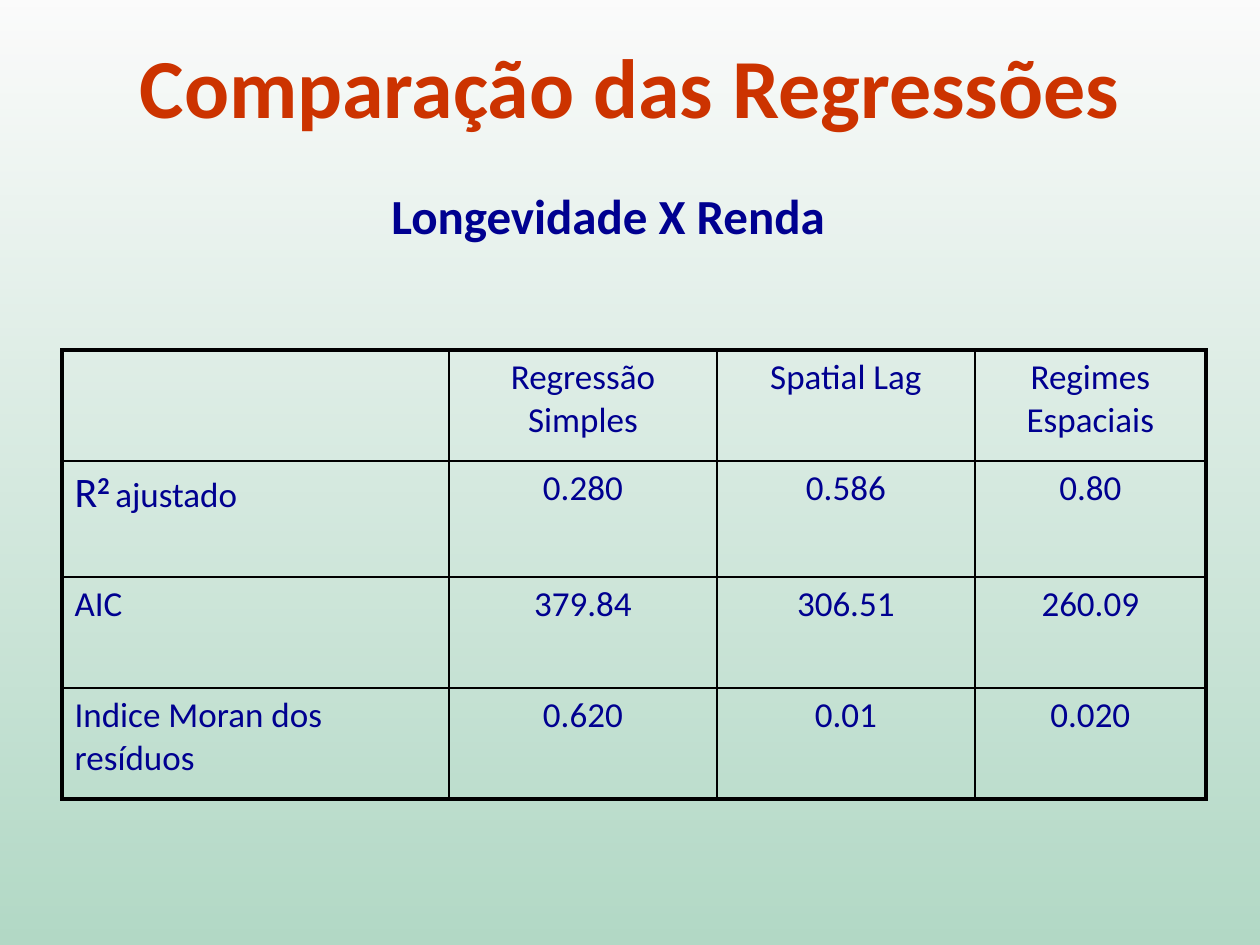
from lxml.etree import SubElement
from pptx import Presentation
from pptx.dml.color import RGBColor
from pptx.enum.shapes import MSO_SHAPE
from pptx.enum.text import MSO_ANCHOR, PP_ALIGN
from pptx.oxml.ns import qn
from pptx.util import Emu, Pt

PX_PER_INCH = 126
NAVY, RED, BLACK = "000090", "CC3300", "000000"


def px(length):
    return Emu(round(length * 914400 / PX_PER_INCH))


def rgb(value):
    return RGBColor.from_string(value)


def write(paragraph, text, size=20, color=NAVY, bold=False, align=PP_ALIGN.LEFT,
          superscript=False, space_percent=20):
    """Append one formatted run to a paragraph."""
    paragraph.alignment = align
    properties = paragraph._p.get_or_add_pPr()
    if space_percent and properties.find(qn("a:spcBef")) is None:
        spacing = SubElement(properties, qn("a:spcBef"))
        SubElement(spacing, qn("a:spcPct")).set("val", str(space_percent * 1000))
    run = paragraph.add_run()
    run.text = text
    run.font.name = "Calibri"
    run.font.size = Pt(size)
    run.font.bold = bold
    run.font.color.rgb = rgb(color)
    if superscript:
        run._r.get_or_add_rPr().set("baseline", "30000")


class SlideBuilder:
    def __init__(self, presentation):
        self.slide = presentation.slides.add_slide(presentation.slide_layouts[5])
        self.shapes = self.slide.shapes

    def backdrop(self, width, height, bottom, top, opacity):
        shape = self.shapes.add_shape(MSO_SHAPE.RECTANGLE, 0, 0, px(width), px(height))
        shape.shadow.inherit = False
        shape.line.fill.background()
        shape.fill.gradient()
        shape.fill.gradient_angle = 90
        for stop, color in zip(shape.fill.gradient_stops, (bottom, top)):
            stop.color.rgb = rgb(color)
        for color in shape._element.spPr.iter(qn("a:srgbClr")):
            SubElement(color, qn("a:alpha")).set("val", str(opacity * 1000))
        # Place behind the title
        self.shapes._spTree.insert(2, shape._element)

    def place_text(self, shape, box, text, **style):
        shape.left, shape.top, shape.width, shape.height = map(px, box)
        frame = shape.text_frame
        frame.word_wrap = True
        frame.vertical_anchor = MSO_ANCHOR.TOP
        write(frame.paragraphs[0], text, **style)

    def title(self, box, text, **style):
        self.place_text(self.shapes.title, box, text, **style)

    def text(self, box, text, **style):
        self.place_text(self.shapes.add_textbox(0, 0, 0, 0), box, text, **style)

    def table(self, left, top, widths, heights, rows):
        frame = self.shapes.add_table(len(rows), len(widths), px(left), px(top),
                                      px(sum(widths)), px(sum(heights)))
        table = frame.table
        table.first_row = table.horz_banding = False
        for column, width in zip(table.columns, widths):
            column.width = px(width)
        for row, height in zip(table.rows, heights):
            row.height = px(height)
        last_row, last_column = len(rows) - 1, len(widths) - 1
        for i, row in enumerate(rows):
            for j, runs in enumerate(row):
                cell = table.cell(i, j)
                self.cell_borders(cell, lnL=j == 0, lnR=j == last_column,
                                  lnT=i == 0, lnB=i == last_row)
                cell.fill.background()
                align = PP_ALIGN.CENTER if j else PP_ALIGN.LEFT
                if isinstance(runs, str):
                    runs = [(runs, {})]
                for text, style in runs:
                    write(cell.text_frame.paragraphs[0], text, align=align, **style)

    def cell_borders(self, cell, **outer_sides):
        properties = cell._tc.get_or_add_tcPr()
        for side, is_outer in outer_sides.items():
            width = Pt(2.25 if is_outer else 1)
            line = SubElement(properties, qn(f"a:{side}"), w=str(width))
            fill = SubElement(line, qn("a:solidFill"))
            SubElement(fill, qn("a:srgbClr"), val=BLACK)


def main():
    presentation = Presentation()
    presentation.slide_width, presentation.slide_height = px(1260), px(945)
    builder = SlideBuilder(presentation)

    # Background and headings
    builder.backdrop(1260, 945, bottom="008040", top="F2F2F2", opacity=30)
    builder.title((0, 28, 1260, 115), "Comparação das Regressões", size=48,
                  color=RED, bold=True, align=PP_ALIGN.CENTER, space_percent=0)
    builder.text((379, 179, 526, 83), "Longevidade X Renda", size=28, bold=True)

    # Comparison of the regressions
    adjusted_r2 = [("R", {"size": 24}),
                   ("2 ", {"size": 24, "bold": True, "superscript": True}),
                   ("ajustado", {})]
    builder.table(62, 350, (387, 268, 258, 231), (111, 116, 111, 111), [
        ([], "Regressão Simples", "Spatial Lag", "Regimes Espaciais"),
        (adjusted_r2, "0.280", "0.586", "0.80"),
        ("AIC", "379.84", "306.51", "260.09"),
        ("Indice Moran dos resíduos", "0.620", "0.01", "0.020"),
    ])
    presentation.save("out.pptx")


if __name__ == "__main__":
    main()
